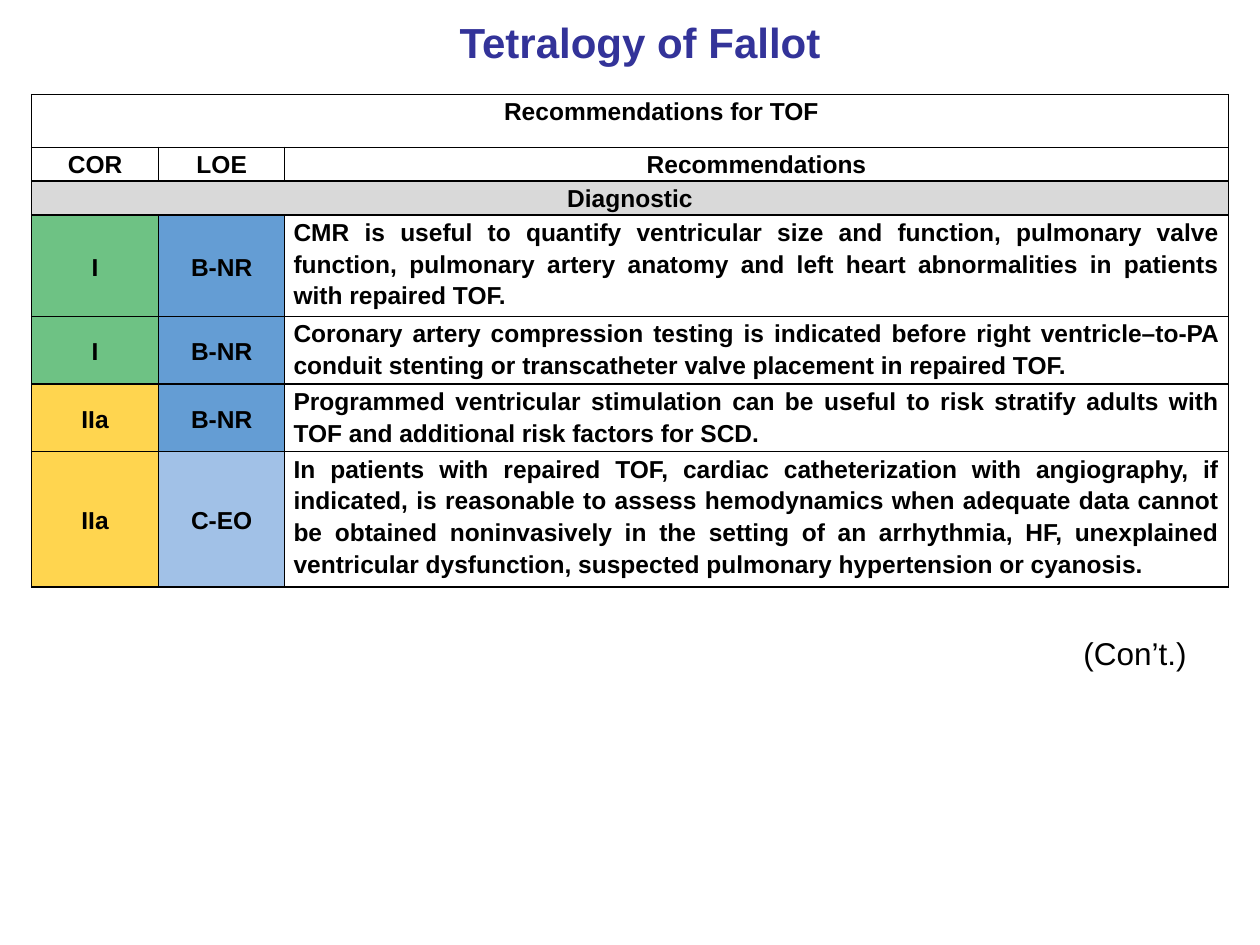
"""Build the Tetralogy of Fallot recommendations slide."""
from dataclasses import dataclass

from lxml.etree import SubElement
from pptx import Presentation
from pptx.dml.color import RGBColor
from pptx.enum.text import MSO_ANCHOR as Anchor, PP_ALIGN as Align
from pptx.oxml.ns import qn
from pptx.util import Inches, Pt

BLACK = "000000"
GREEN, GOLD = "6EC284", "FFD54F"
BLUE, PALE = "649DD4", "A1C1E7"
GREY = "D9D9D9"
COLS = (1.01, 1, 7.49)


@dataclass
class Cell:
    text: str
    fill: str = ""
    align: Align = Align.CENTER
    anchor: Anchor = Anchor.TOP


@dataclass
class Row:
    height: float
    cells: list[Cell]


def color(code: str) -> RGBColor:
    return RGBColor.from_string(code)


def style(para, size: float, code: str = BLACK, bold: bool = False) -> None:
    font = para.font
    font.name, font.size, font.bold = "Arial", Pt(size), bold
    font.color.rgb = color(code)


def place(shape, left: float, top: float, width: float, height: float) -> None:
    shape.left, shape.top = Inches(left), Inches(top)
    shape.width, shape.height = Inches(width), Inches(height)


def border(cell) -> None:
    props = cell._tc.get_or_add_tcPr()
    for side in "LRTB":
        line = SubElement(props, qn(f"a:ln{side}"), w=str(Pt(1)))
        paint = SubElement(line, qn("a:solidFill"))
        SubElement(paint, qn("a:srgbClr"), val=BLACK)


def fill_cell(cell, data: Cell) -> None:
    if data.fill:
        cell.fill.solid()
        cell.fill.fore_color.rgb = color(data.fill)
    cell.vertical_anchor = data.anchor
    para = cell.text_frame.paragraphs[0]
    para.text = data.text
    para.alignment, para.line_spacing = data.align, 1.15
    style(para, 14, bold=True)


def advice(height: float, cor: str, loe: str, text: str) -> Row:
    shade = GREEN if cor == "I" else GOLD
    tint = BLUE if loe == "B-NR" else PALE
    return Row(height, [
        Cell(cor, shade, anchor=Anchor.MIDDLE),
        Cell(loe, tint, anchor=Anchor.MIDDLE),
        Cell(text, align=Align.JUSTIFY),
    ])


ROWS = [
    Row(0.42, [Cell("\tRecommendations for TOF")]),
    Row(0.25, [Cell("COR"), Cell("LOE"), Cell("Recommendations")]),
    Row(0.25, [Cell("Diagnostic", GREY)]),
    advice(0.52, "I", "B-NR",
           "CMR is useful to quantify ventricular size and function, pulmonary "
           "valve function, pulmonary artery anatomy and left heart "
           "abnormalities in patients with repaired TOF."),
    advice(0.52, "I", "B-NR",
           "Coronary artery compression testing is indicated before right "
           "ventricle–to-PA conduit stenting or transcatheter valve placement "
           "in repaired TOF."),
    advice(0.52, "IIa", "B-NR",
           "Programmed ventricular stimulation can be useful to risk stratify "
           "adults with TOF and additional risk factors for SCD."),
    advice(0.79, "IIa", "C-EO",
           "In patients with repaired TOF, cardiac catheterization with "
           "angiography, if indicated, is reasonable to assess hemodynamics "
           "when adequate data cannot be obtained noninvasively in the setting "
           "of an arrhythmia, HF, unexplained ventricular dysfunction, "
           "suspected pulmonary hypertension or cyanosis."),
]


def add_grid(slide, rows: list[Row]) -> None:
    frame = slide.shapes.add_table(len(rows), len(COLS), 0, 0, 0, 0)
    table = frame.table
    table.first_row = table.horz_banding = False
    for col, width in zip(table.columns, COLS):
        col.width = Inches(width)
    for i, row in enumerate(rows):
        table.rows[i].height = Inches(row.height)
        for cell in table.rows[i].cells:
            cell.margin_left = cell.margin_right = Inches(0.07)
            cell.margin_top = cell.margin_bottom = 0
            border(cell)
            cell.fill.background()
        if len(row.cells) == 1:
            table.cell(i, 0).merge(table.cell(i, len(COLS) - 1))
        for j, data in enumerate(row.cells):
            fill_cell(table.cell(i, j), data)
    place(frame, 0.25, 0.75, sum(COLS), 3.79)


def main() -> None:
    deck = Presentation()
    deck.slide_width, deck.slide_height = Inches(10), Inches(7.5)
    slide = deck.slides.add_slide(deck.slide_layouts[5])

    title = slide.shapes.title
    place(title, 0.58, 0.08, 9, 0.5)
    title.text_frame.vertical_anchor = Anchor.MIDDLE
    head = title.text_frame.paragraphs[0]
    head.text, head.alignment = "Tetralogy of Fallot", Align.CENTER
    style(head, 24, "333399", True)

    note = slide.shapes.add_textbox(
        Inches(8.5), Inches(4.98), Inches(1.5), Inches(0.4))
    note.text_frame.word_wrap = True
    para = note.text_frame.paragraphs[0]
    para.text = "(Con’t.)"
    style(para, 18)

    add_grid(slide, ROWS)
    deck.save("out.pptx")


if __name__ == "__main__":
    main()
